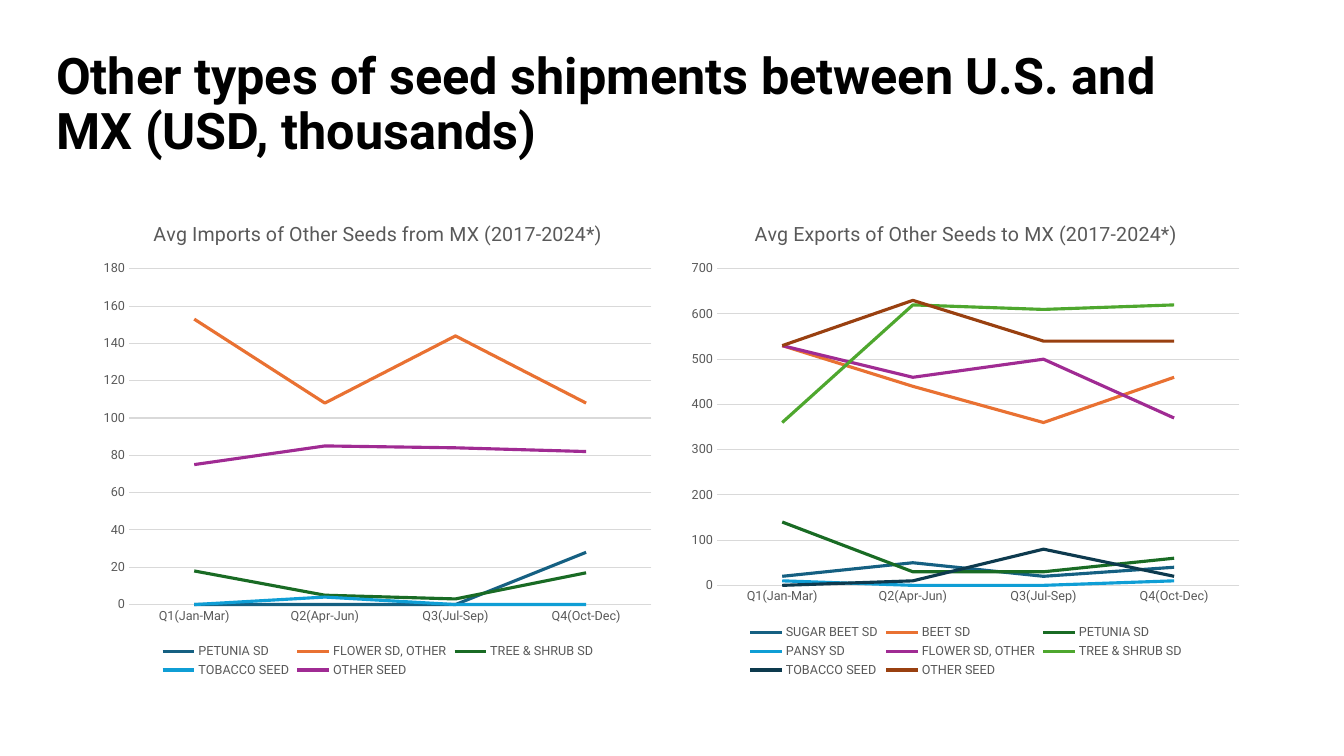
from lxml import etree
from pptx import Presentation
from pptx.chart.data import CategoryChartData
from pptx.dml.color import RGBColor
from pptx.enum.chart import XL_CHART_TYPE, XL_LEGEND_POSITION, XL_TICK_MARK
from pptx.enum.text import MSO_ANCHOR
from pptx.util import Pt

LINE = XL_CHART_TYPE.LINE
BOTTOM = XL_LEGEND_POSITION.BOTTOM
NO_TICK = XL_TICK_MARK.NONE
MIDDLE = MSO_ANCHOR.MIDDLE
PX = 9525  # EMU in one px, 96 px to the inch

THEME = {
    "font": "Roboto",
    "ink": "000000", "gray": "595959", "grid": "D9D9D9",
    "blue": "156082", "orange": "E97132", "green": "196B24", "sky": "0F9ED5",
    "plum": "A02B93", "lime": "4EA72E", "navy": "0D3A4E", "brown": "994010",
    "head": 36, "title": 14, "label": 9, "hair": 0.75, "stroke": 2.25,
}

QUARTERS = ["Q1(Jan-Mar)", "Q2(Apr-Jun)", "Q3(Jul-Sep)", "Q4(Oct-Dec)"]
IMPORTS = [
    ("PETUNIA SD", "blue", [0, 0, 0, 28]),
    ("FLOWER SD, OTHER", "orange", [153, 108, 144, 108]),
    ("TREE & SHRUB SD", "green", [18, 5, 3, 17]),
    ("TOBACCO SEED", "sky", [0, 4, 0, 0]),
    ("OTHER SEED", "plum", [75, 85, 84, 82]),
]
EXPORTS = [
    ("SUGAR BEET SD", "blue", [20, 50, 20, 40]),
    ("BEET SD", "orange", [530, 440, 360, 460]),
    ("PETUNIA SD", "green", [140, 30, 30, 60]),
    ("PANSY SD", "sky", [10, 0, 0, 10]),
    ("FLOWER SD, OTHER", "plum", [530, 460, 500, 370]),
    ("TREE & SHRUB SD", "lime", [360, 620, 610, 620]),
    ("TOBACCO SEED", "navy", [0, 10, 80, 20]),
    ("OTHER SEED", "brown", [530, 630, 540, 540]),
]
# title, left, axis top, axis step, share of height for the plot, series
CHARTS = [
    ("Avg Exports of Other Seeds to MX (2017-2024*)", 648, 700, 100, 0.66, EXPORTS),
    ("Avg Imports of Other Seeds from MX (2017-2024*)", 88, 180, 20, 0.7, IMPORTS),
]


def style(font, size, color, bold=False):
    font.name = THEME["font"]
    font.size = Pt(THEME[size])
    font.bold = bold
    font.color.rgb = RGBColor.from_string(THEME[color])


def stroke(line, width, color):
    line.width = Pt(THEME[width])
    line.color.rgb = RGBColor.from_string(THEME[color])


deck = Presentation()
deck.slide_width, deck.slide_height = 1280 * PX, 720 * PX
slide = deck.slides.add_slide(deck.slide_layouts[6])

# Heading
box = slide.shapes.add_textbox(44 * PX, 31 * PX, 1104 * PX, 139 * PX)
frame = box.text_frame
frame.word_wrap = True
frame.vertical_anchor = MIDDLE
para = frame.paragraphs[0]
para.text = "Other types of seed shipments between U.S. and MX (USD, thousands)"
para.line_spacing = 0.9
style(para.font, "head", "ink", True)

# Line charts
for title, left, top, step, tall, rows in CHARTS:
    data = CategoryChartData()
    data.categories = QUARTERS
    for name, color, vals in rows:
        data.add_series(name, vals)
    chart = slide.shapes.add_chart(
        LINE, left * PX, 192 * PX, 544 * PX, 457 * PX, data).chart
    style(chart.font, "label", "gray")

    # Title and legend
    chart.has_title = True
    para = chart.chart_title.text_frame.paragraphs[0]
    para.text = title
    style(para.font, "title", "gray")
    chart.chart_title.include_in_layout = False
    chart.has_legend = True
    chart.legend.position = BOTTOM
    chart.legend.include_in_layout = False
    style(chart.legend.font, "label", "gray")

    # Axes
    for axis in (chart.category_axis, chart.value_axis):
        axis.major_tick_mark = axis.minor_tick_mark = NO_TICK
        style(axis.tick_labels.font, "label", "gray")
    stroke(chart.category_axis.format.line, "hair", "grid")
    scale = chart.value_axis
    scale.minimum_scale, scale.maximum_scale = 0, top
    scale.major_unit = step
    scale.format.line.fill.background()
    stroke(scale.major_gridlines.format.line, "hair", "grid")

    # Series
    chart.plots[0].vary_by_categories = False
    for line, (name, color, vals) in zip(chart.plots[0].series, rows):
        line.smooth = False
        stroke(line.format.line, "stroke", color)

    # Plot area, as shares of the chart
    area = chart.plots[0]._element.getparent()
    ns = "{" + area.nsmap["c"] + "}"
    for old in area.findall(ns + "layout"):
        area.remove(old)
    layout = etree.Element(ns + "layout")
    area.insert(0, layout)
    manual = etree.SubElement(layout, ns + "manualLayout")
    for tag, val in (("layoutTarget", "inner"), ("xMode", "edge"), ("yMode", "edge"),
                     ("x", 0.064), ("y", 0.14), ("w", 0.915), ("h", tall)):
        etree.SubElement(manual, ns + tag, val=str(val))

deck.save("out.pptx")
